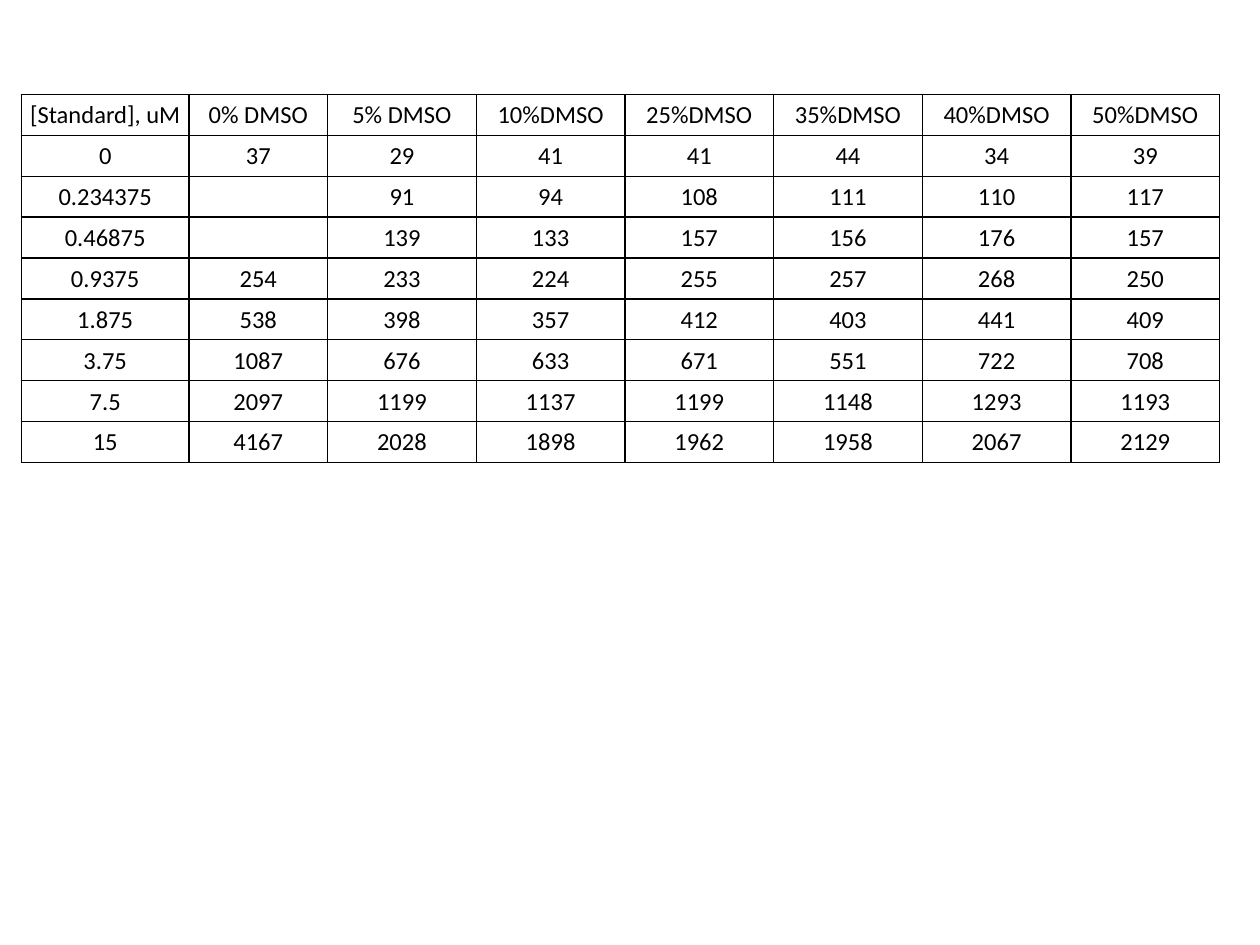
from pptx import Presentation
from pptx.dml.color import RGBColor
from pptx.enum.text import MSO_ANCHOR, PP_ALIGN
from pptx.oxml.ns import qn
from pptx.util import Emu, Pt
from lxml.etree import SubElement

EMU_PER_PX = 9144  # 100 px to the inch
COLORS = {"text": "000000", "border": "000000"}

HEADER = ["[Standard], uM", "0% DMSO", "5% DMSO", "10%DMSO",
          "25%DMSO", "35%DMSO", "40%DMSO", "50%DMSO"]
READINGS = [
    ["0", "37", "29", "41", "41", "44", "34", "39"],
    ["0.234375", "", "91", "94", "108", "111", "110", "117"],
    ["0.46875", "", "139", "133", "157", "156", "176", "157"],
    ["0.9375", "254", "233", "224", "255", "257", "268", "250"],
    ["1.875", "538", "398", "357", "412", "403", "441", "409"],
    ["3.75", "1087", "676", "633", "671", "551", "722", "708"],
    ["7.5", "2097", "1199", "1137", "1199", "1148", "1293", "1193"],
    ["15", "4167", "2028", "1898", "1962", "1958", "2067", "2129"],
]
COLUMN_WIDTHS = [133, 110] + [118] * 6


def px(length):
    return Emu(length * EMU_PER_PX)


class SlideBuilder:
    font_name = "Calibri"
    font_size = Pt(14)
    border_width = Pt(1)

    def __init__(self, slide):
        self.slide = slide

    def add_table(self, left, top, height, column_widths, rows):
        frame = self.slide.shapes.add_table(
            len(rows), len(column_widths), px(left), px(top),
            px(sum(column_widths)), px(height))
        table = frame.table
        table.first_row = False
        table.horz_banding = False
        for column, width in zip(table.columns, column_widths):
            column.width = px(width)
        for table_row, texts in zip(table.rows, rows):
            for cell, text in zip(table_row.cells, texts):
                self.fill_cell(cell, text)

    def fill_cell(self, cell, text):
        cell.margin_left = cell.margin_right = cell.margin_top = px(1)
        cell.margin_bottom = 0
        cell.vertical_anchor = MSO_ANCHOR.MIDDLE
        self.add_borders(cell)
        cell.fill.background()
        cell.text = text
        paragraph = cell.text_frame.paragraphs[0]
        paragraph.alignment = PP_ALIGN.CENTER
        paragraph.font.name = self.font_name
        paragraph.font.size = self.font_size
        paragraph.font.color.rgb = RGBColor.from_string(COLORS["text"])

    def add_borders(self, cell):
        properties = cell._tc.get_or_add_tcPr()
        for side in ("L", "R", "T", "B"):
            line = SubElement(properties, qn(f"a:ln{side}"), w=str(self.border_width))
            fill = SubElement(line, qn("a:solidFill"))
            SubElement(fill, qn("a:srgbClr"), val=COLORS["border"])


def main():
    presentation = Presentation()
    presentation.slide_width = px(1000)
    presentation.slide_height = px(750)
    blank_layout = presentation.slide_layouts[6]
    builder = SlideBuilder(presentation.slides.add_slide(blank_layout))
    builder.add_table(17, 75, 292, COLUMN_WIDTHS, [HEADER] + READINGS)
    presentation.save("out.pptx")


if __name__ == "__main__":
    main()
